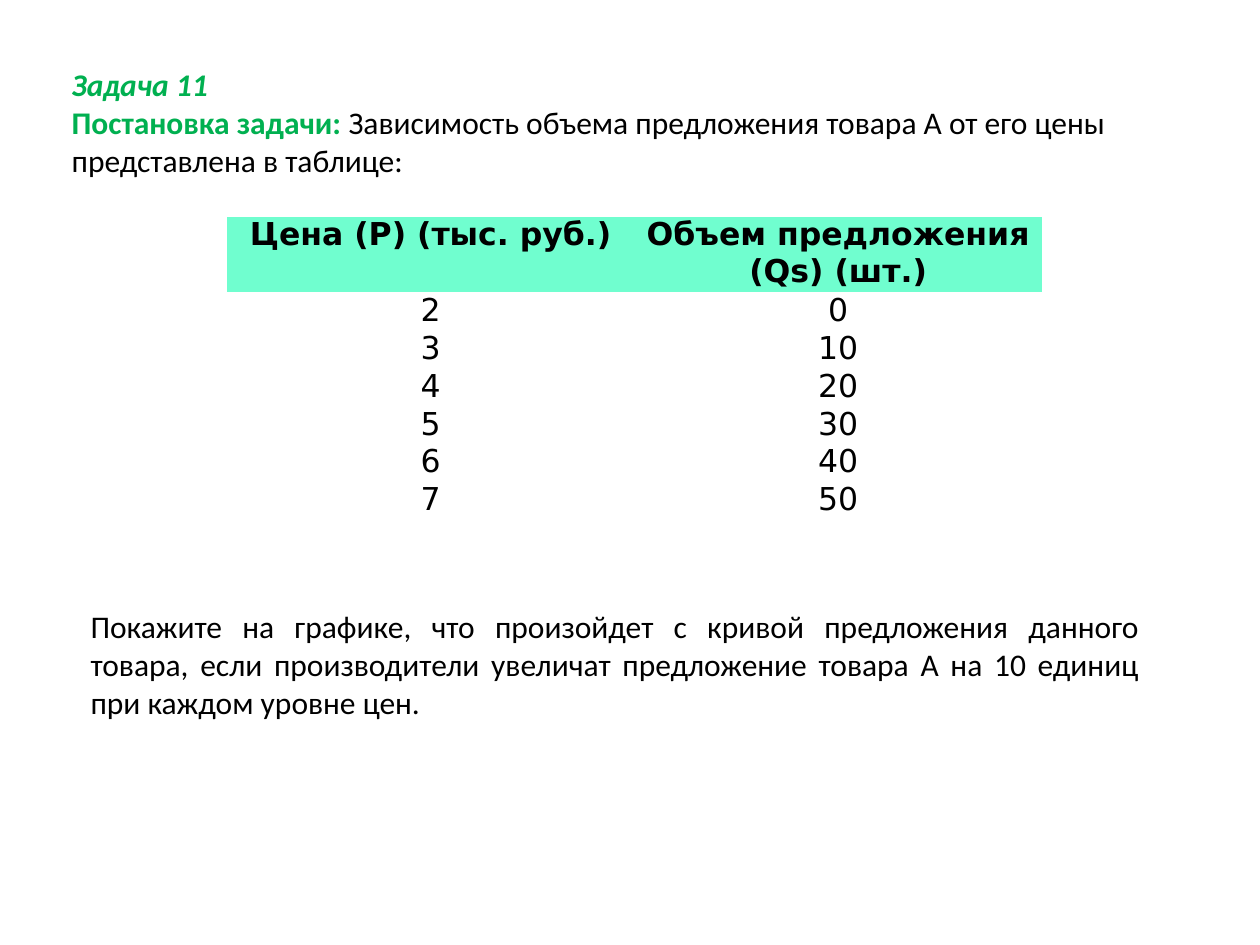
from pptx import Presentation
from pptx.dml.color import RGBColor
from pptx.enum.text import MSO_AUTO_SIZE as AutoSize, PP_ALIGN as Align
from pptx.oxml.ns import qn
from pptx.util import Inches, Pt

COLORS = {"text": "000000", "accent": "00B050", "header": "70FECF"}
PLAIN_TABLE_STYLE = "{2D5ABB26-0587-4C30-8999-92F81FD0307C}"
HEADERS = ("Цена (Р) (тыс. руб.)", "Объем предложения (Qs) (шт.)")
SUPPLY = [(price, 10 * (price - 2)) for price in range(2, 8)]


def add_span(para, text, font="Calibri", color="text", bold=False, italic=False):
    """Append a formatted run to a paragraph."""
    span = para.add_run()
    span.text = text
    span.font.name = font
    span.font.size = Pt(18)
    span.font.bold = bold
    span.font.italic = italic
    span.font.color.rgb = RGBColor.from_string(COLORS[color])


def add_text(page, left, top, width, height, paragraphs, align=Align.LEFT):
    """Add a wrapping text box from lists of (text, format) spans."""
    box = page.shapes.add_textbox(Inches(left), Inches(top), Inches(width), Inches(height))
    frame = box.text_frame
    frame.word_wrap = True
    frame.auto_size = AutoSize.SHAPE_TO_FIT_TEXT
    for index, spans in enumerate(paragraphs):
        para = frame.add_paragraph() if index else frame.paragraphs[0]
        para.alignment = align
        for text, style in spans:
            add_span(para, text, **style)


def fill_cell(cell, text, header):
    """Write one centred table cell without margins."""
    cell.margin_left = cell.margin_right = cell.margin_top = cell.margin_bottom = 0
    if header:
        cell.fill.solid()
        cell.fill.fore_color.rgb = RGBColor.from_string(COLORS["header"])
    else:
        cell.fill.background()
    para = cell.text_frame.paragraphs[0]
    para.alignment = Align.CENTER
    add_span(para, text, font="DejaVu Sans", bold=header)


def add_supply_table(page):
    """Add the table of prices and supplied quantities."""
    rows = [HEADERS, *SUPPLY]
    table = page.shapes.add_table(
        len(rows), len(HEADERS), Inches(1.8), Inches(1.72), Inches(6.47), Inches(2.4)
    ).table
    table.horz_banding = False
    table._tbl.tblPr.find(qn("a:tableStyleId")).text = PLAIN_TABLE_STYLE
    for row_index, values in enumerate(rows):
        header = row_index == 0
        table.rows[row_index].height = Inches(0.6 if header else 0.3)
        for column, value in enumerate(values):
            fill_cell(table.cell(row_index, column), str(value), header)


def main():
    """Build the slide and save it."""
    deck = Presentation()
    deck.slide_width, deck.slide_height = Inches(10), Inches(7.5)
    page = deck.slides.add_slide(deck.slide_layouts[6])
    label = {"color": "accent", "bold": True}
    add_text(page, 0.47, 0.47, 9.22, 1.01, [
        [("Задача 11", {**label, "italic": True})],
        [("Постановка задачи:\u00a0", label),
         ("Зависимость объема предложения товара А от его цены "
          "представлена в таблице:", {})],
    ])
    add_supply_table(page)
    add_text(page, 0.62, 4.77, 8.52, 1.01, [
        [("Покажите на графике, что произойдет с кривой предложения данного товара, "
          "если производители увеличат предложение товара А на 10 единиц "
          "при каждом уровне цен.", {})],
    ], align=Align.JUSTIFY)
    deck.save("out.pptx")


if __name__ == "__main__":
    main()
